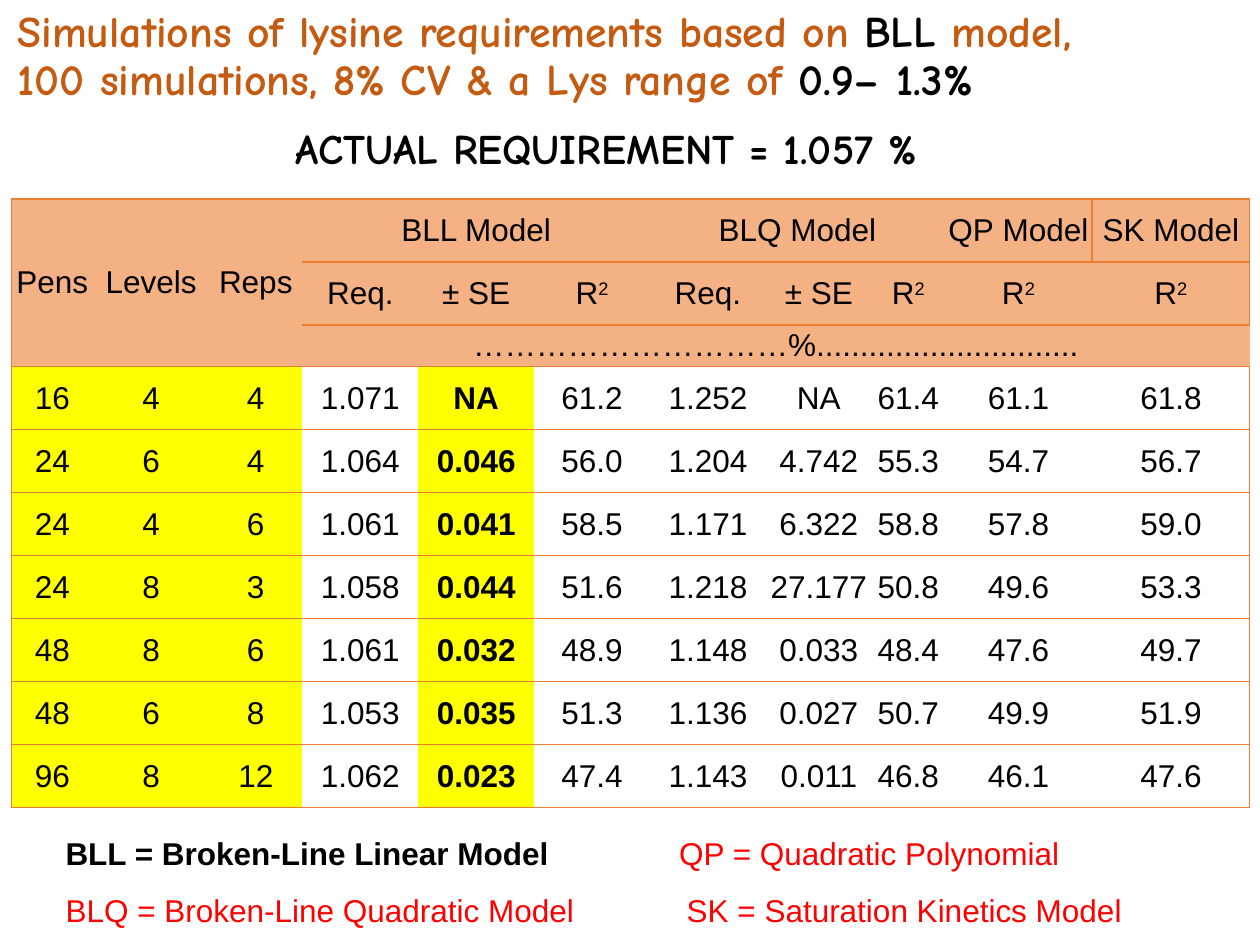
from lxml import etree
from pptx import Presentation
from pptx.dml.color import RGBColor
from pptx.enum.text import MSO_ANCHOR, MSO_AUTO_SIZE, PP_ALIGN
from pptx.oxml.ns import qn
from pptx.util import Inches, Pt

MIDDLE = MSO_ANCHOR.MIDDLE
GROW = MSO_AUTO_SIZE.SHAPE_TO_FIT_TEXT
NO_FIT = MSO_AUTO_SIZE.NONE
LEFT = PP_ALIGN.LEFT
CENTER = PP_ALIGN.CENTER

COLORS = {
    "title": "C55A11",
    "text": "000000",
    "alert": "FF0000",
    "header": "F4B183",
    "highlight": "FFFF00",
    "plain": "FFFFFF",
    "border": "ED7D31",
}
HEADING_FONT = "Comic Neue"
BODY_FONT = "Arial"

COLUMN_WIDTHS = [0.65, 0.92, 0.74, 0.92, 0.92, 0.92, 0.92, 0.84, 0.58, 1.17, 1.25]
ROW_HEIGHTS = [0.5, 0.5, 0.33] + [0.5] * 7
HEADER_ROWS = 3
DESIGN_COLUMNS = 3
BLL_SE_COLUMN = 4
LAST_COLUMN = len(COLUMN_WIDTHS) - 1
SQUARED = "R²"

HEADERS = [
    ["Pens", "Levels", "Reps", "BLL Model", "", "", "BLQ Model", "", "",
     "QP\u00a0Model", "SK\u00a0Model"],
    ["", "", "", "Req.", "± SE", SQUARED, "Req.", "± SE", SQUARED, SQUARED, SQUARED],
    ["", "", "", "…………………………%..............................", "", "", "", "", "", "", ""],
]
RESULTS = [
    "16 4 4 1.071 NA 61.2 1.252 NA 61.4 61.1 61.8",
    "24 6 4 1.064 0.046 56.0 1.204 4.742 55.3 54.7 56.7",
    "24 4 6 1.061 0.041 58.5 1.171 6.322 58.8 57.8 59.0",
    "24 8 3 1.058 0.044 51.6 1.218 27.177 50.8 49.6 53.3",
    "48 8 6 1.061 0.032 48.9 1.148 0.033 48.4 47.6 49.7",
    "48 6 8 1.053 0.035 51.3 1.136 0.027 50.7 49.9 51.9",
    "96 8 12 1.062 0.023 47.4 1.143 0.011 46.8 46.1 47.6",
]
MERGES = [
    *[(0, column, HEADER_ROWS - 1, column) for column in range(DESIGN_COLUMNS)],
    (0, 3, 0, 5),
    (0, 6, 0, 8),
    (2, 3, 2, LAST_COLUMN),
]


def add_run(paragraph, text, size, font, color="text", bold=False):
    run = paragraph.add_run()
    run.text = text
    run.font.size = Pt(size)
    run.font.name = font
    run.font.bold = bold
    run.font.color.rgb = RGBColor.from_string(COLORS[color])
    return run


def add_title(slide):
    title = slide.shapes.title
    title.left, title.top = Inches(0.04), Inches(0)
    title.width, title.height = Inches(9.83), Inches(0.91)
    frame = title.text_frame
    frame.auto_size = NO_FIT
    frame.vertical_anchor = MIDDLE
    paragraph = frame.paragraphs[0]
    paragraph.alignment = LEFT
    paragraph.line_spacing = 0.9
    lines = [
        [("Simulations of lysine requirements based on ", "title"),
         ("BLL", "text"), (" model,", "title")],
        [("100 simulations, 8% CV & a Lys range of ", "title"), ("0.9– 1.3%", "text")],
    ]
    for index, line in enumerate(lines):
        if index:
            paragraph.add_line_break()
        for text, color in line:
            add_run(paragraph, text, 25, HEADING_FONT, color, True)


def add_text_box(slide, left, top, width, height):
    box = slide.shapes.add_textbox(Inches(left), Inches(top), Inches(width), Inches(height))
    box.text_frame.word_wrap = True
    box.text_frame.auto_size = GROW
    return box.text_frame


def set_borders(cell, row, column):
    across = row >= HEADER_ROWS or column >= DESIGN_COLUMNS
    edges = {
        "L": column == 0 or (row == 0 and column == LAST_COLUMN),
        "R": column == LAST_COLUMN or (row == 0 and column == LAST_COLUMN - 1),
        "T": across or row == 0,
        "B": across or row == HEADER_ROWS - 1,
    }
    properties = cell._tc.get_or_add_tcPr()
    for index, (edge, visible) in enumerate(edges.items()):
        line = etree.Element(qn(f"a:ln{edge}"), w=str(Pt(1)))
        if visible:
            fill = etree.SubElement(line, qn("a:solidFill"))
            etree.SubElement(fill, qn("a:srgbClr"), val=COLORS["border"])
        else:
            etree.SubElement(line, qn("a:noFill"))
        properties.insert(index, line)


def fill_cell(cell, text, row, column):
    is_result = row >= HEADER_ROWS
    highlighted = column < DESIGN_COLUMNS or column == BLL_SE_COLUMN
    color = "header" if not is_result else "highlight" if highlighted else "plain"
    cell.fill.solid()
    cell.fill.fore_color.rgb = RGBColor.from_string(COLORS[color])
    cell.margin_left = cell.margin_right = cell.margin_top = cell.margin_bottom = 0
    cell.vertical_anchor = MIDDLE
    set_borders(cell, row, column)
    if not text:
        return
    paragraph = cell.text_frame.paragraphs[0]
    paragraph.alignment = CENTER
    bold = is_result and column == BLL_SE_COLUMN
    add_run(paragraph, text.rstrip("²"), 18, BODY_FONT, bold=bold)
    if text == SQUARED:
        exponent = add_run(paragraph, "2", 18, BODY_FONT)
        exponent.font._element.set("baseline", "30000")


def add_results_table(slide):
    rows = HEADERS + [line.split() for line in RESULTS]
    table = slide.shapes.add_table(
        len(rows), len(COLUMN_WIDTHS),
        Inches(0.09), Inches(1.58), Inches(9.83), Inches(4.83)).table
    table.first_row = False
    table.horz_banding = False
    for column, width in zip(table.columns, COLUMN_WIDTHS):
        column.width = Inches(width)
    for row, height in zip(table.rows, ROW_HEIGHTS):
        row.height = Inches(height)
    for top, left, bottom, right in MERGES:
        table.cell(top, left).merge(table.cell(bottom, right))
    for row, values in enumerate(rows):
        for column, text in enumerate(values):
            fill_cell(table.cell(row, column), text, row, column)


def add_legend(slide):
    frame = add_text_box(slide, -0.08, 6.42, 10.08, 1.01)
    frame.margin_left = Inches(0.6)
    entries = [
        ("BLL = Broken-Line Linear Model", "text", True, "QP = Quadratic Polynomial", 4.87),
        ("BLQ = Broken-Line Quadratic Model", "alert", False,
         "SK = Saturation Kinetics Model", 4.93),
    ]
    for index, (first, color, bold, second, stop) in enumerate(entries):
        paragraph = frame.add_paragraph() if index else frame.paragraphs[0]
        paragraph.line_spacing = 1.5
        tabs = etree.SubElement(paragraph._p.get_or_add_pPr(), qn("a:tabLst"))
        etree.SubElement(tabs, qn("a:tab"), pos=str(Inches(stop)), algn="l")
        add_run(paragraph, first, 18, BODY_FONT, color, bold)
        add_run(paragraph, "\t" + second, 18, BODY_FONT, "alert")


def add_requirement(slide):
    frame = add_text_box(slide, 2.25, 0.92, 6.33, 0.5)
    add_run(frame.paragraphs[0], "ACTUAL REQUIREMENT = 1.057 %", 24, HEADING_FONT, bold=True)


def main():
    presentation = Presentation()
    presentation.slide_width = Inches(10)
    presentation.slide_height = Inches(7.5)
    slide = presentation.slides.add_slide(presentation.slide_layouts[5])
    add_title(slide)
    add_results_table(slide)
    add_legend(slide)
    add_requirement(slide)
    presentation.save("out.pptx")


if __name__ == "__main__":
    main()
